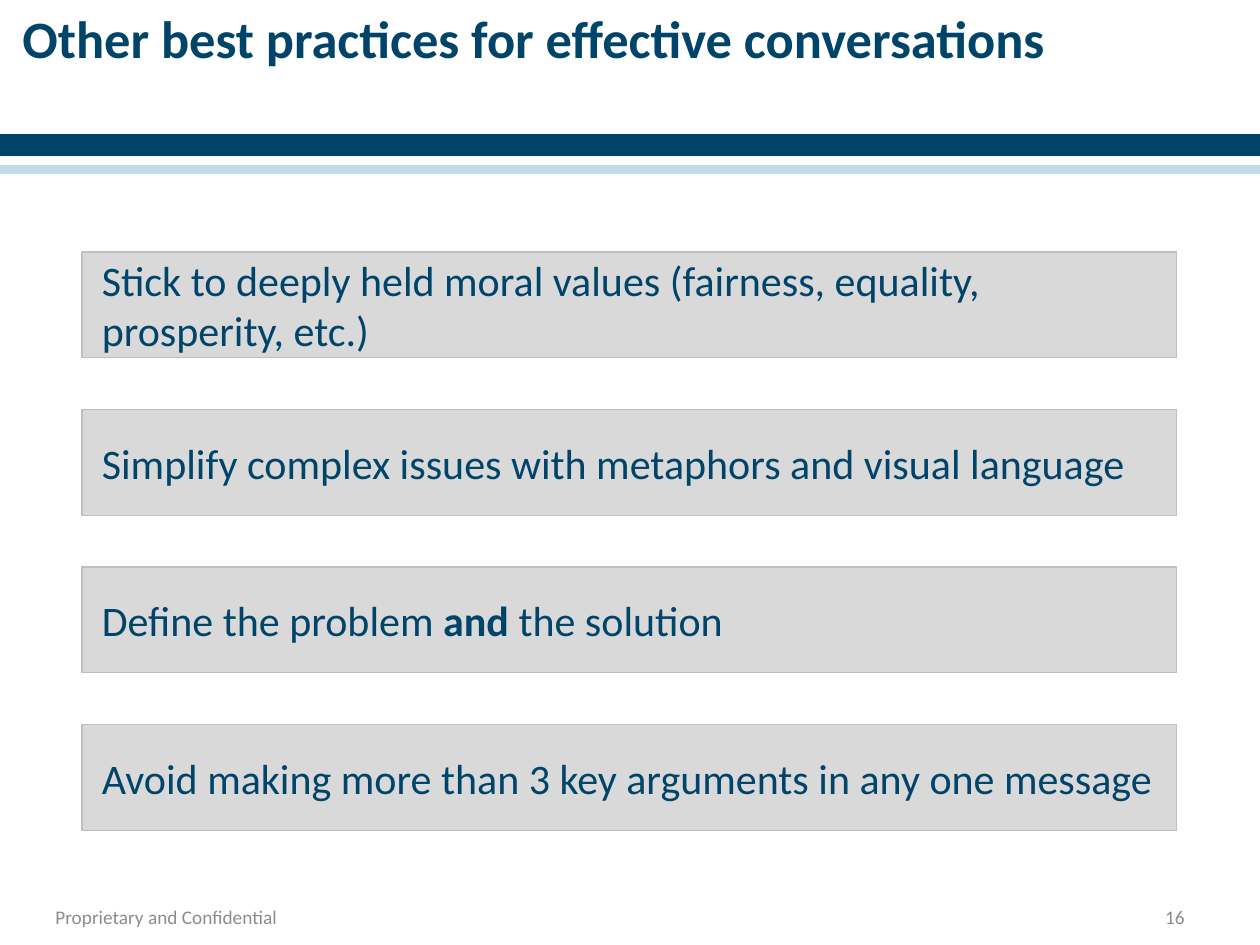
"""Build a slide of best practices for effective conversations."""
from pptx import Presentation
from pptx.dml.color import RGBColor
from pptx.enum.shapes import MSO_SHAPE
from pptx.enum.text import MSO_ANCHOR, PP_ALIGN
from pptx.util import Inches, Pt

RECT = MSO_SHAPE.RECTANGLE
TOP, MIDDLE = MSO_ANCHOR.TOP, MSO_ANCHOR.MIDDLE
LEFT, RIGHT = PP_ALIGN.LEFT, PP_ALIGN.RIGHT
NAVY = RGBColor(0x00, 0x44, 0x6A)
SKY = RGBColor(0xC2, 0xDB, 0xE8)
WHITE = RGBColor(0xFF, 0xFF, 0xFF)
PALE = RGBColor(0xD9, 0xD9, 0xD9)
EDGE = RGBColor(0xBF, 0xBF, 0xBF)
GREY = RGBColor(0x8C, 0x8C, 0x8C)

BANDS = [(1.08, 0.25, NAVY), (1.25, 0.05, WHITE), (1.32, 0.05, SKY)]
TIPS = [
    [("Stick to deeply held moral values (fairness, equality, prosperity, etc.)", False)],
    [("Simplify complex issues with metaphors and visual language", False)],
    [("Define the problem ", False), ("and", True), (" the solution", False)],
    [("Avoid making more than 3 key arguments in any one message", False)],
]
TIP_TOP, TIP_STEP = 2, 1.25


def add_rect(slide, box, fill, edge, width):
    """Add a flat rectangle with an outline."""
    shape = slide.shapes.add_shape(RECT, *map(Inches, box))
    shape.shadow.inherit = False
    shape.fill.solid()
    shape.fill.fore_color.rgb = fill
    shape.line.color.rgb = edge
    shape.line.width = Pt(width)
    return shape


def write(shape, runs, size, color, align=LEFT, anchor=MIDDLE):
    """Fill a shape with one paragraph of (text, bold) runs."""
    frame = shape.text_frame
    frame.word_wrap = True
    frame.vertical_anchor = anchor
    para = frame.paragraphs[0]
    para.alignment = align
    for text, bold in runs:
        run = para.add_run()
        run.text = text
        run.font.name = "Calibri"
        run.font.size = Pt(size)
        run.font.bold = bold
        run.font.color.rgb = color
    return frame


def add_label(slide, box, text, size, color, bold=False, align=LEFT, anchor=MIDDLE):
    """Add a text box holding a single run."""
    label = slide.shapes.add_textbox(*map(Inches, box))
    return write(label, [(text, bold)], size, color, align, anchor)


def add_tip(slide, top, runs):
    """Add one tip in a grey panel with a slight left indent."""
    panel = add_rect(slide, (0.65, top, 8.69, 0.84), PALE, EDGE, 0.75)
    frame = write(panel, runs, 24, NAVY)
    frame.paragraphs[0]._p.get_or_add_pPr().set("marL", str(Inches(0.06)))


def main():
    """Build and save the slide."""
    deck = Presentation()
    deck.slide_width, deck.slide_height = Inches(10), Inches(7.5)
    slide = deck.slides.add_slide(deck.slide_layouts[6])
    for top, height, color in BANDS:
        add_rect(slide, (0, top, 10, height), color, color, 2)
    add_label(slide, (0.08, 0, 9, 1.25), "Other best practices for effective conversations",
              30, NAVY, bold=True, anchor=TOP)
    for row, runs in enumerate(TIPS):
        add_tip(slide, TIP_TOP + row * TIP_STEP, runs)
    footer = add_label(slide, (0.33, 7.1, 2.57, 0.35), "Proprietary and Confidential", 11, GREY)
    footer.margin_left = footer.margin_right = Inches(0.11)
    footer.margin_top = footer.margin_bottom = Inches(0.06)
    add_label(slide, (7.17, 7.1, 2.33, 0.35), "16", 11, GREY, align=RIGHT)
    deck.save("out.pptx")


if __name__ == "__main__":
    main()
